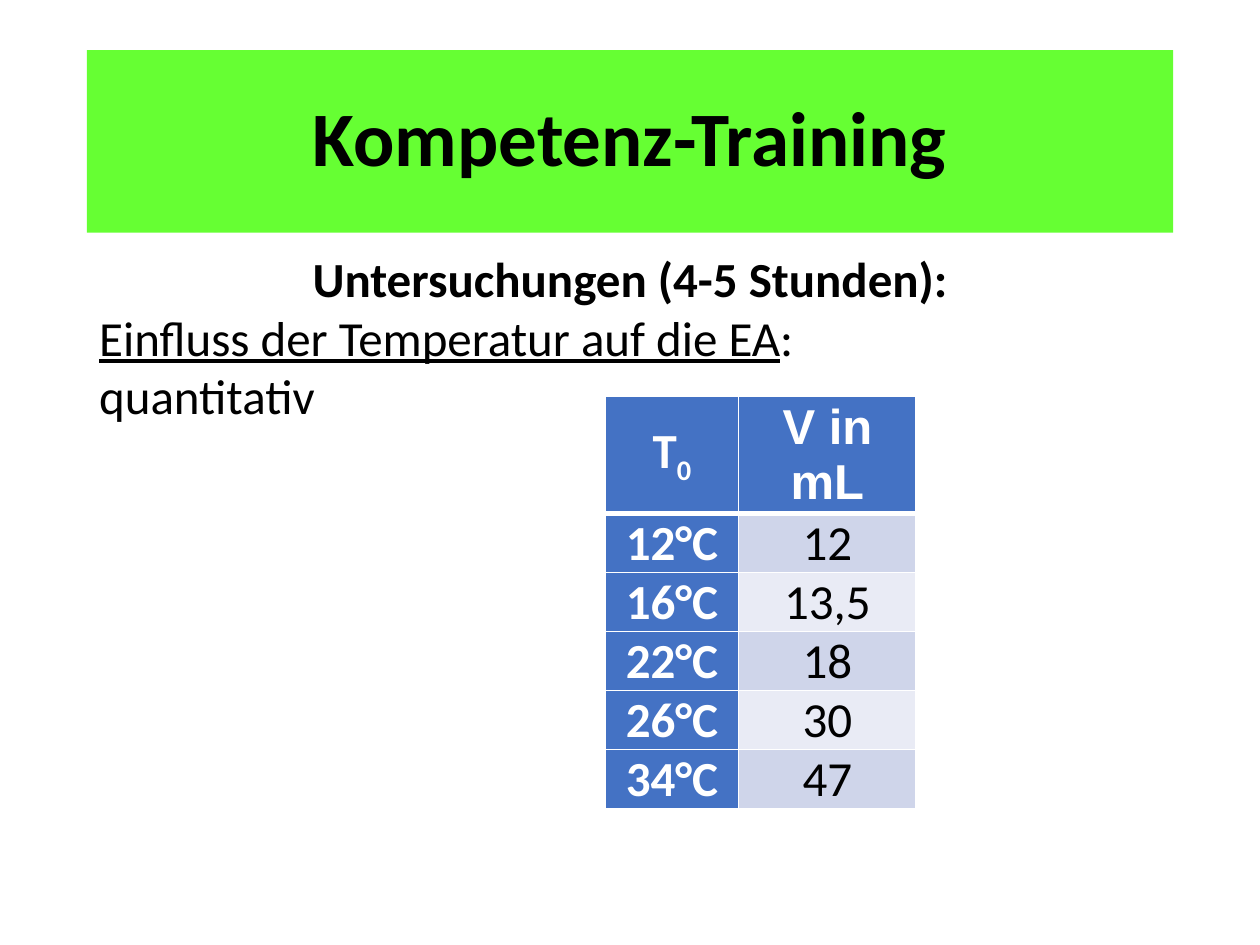
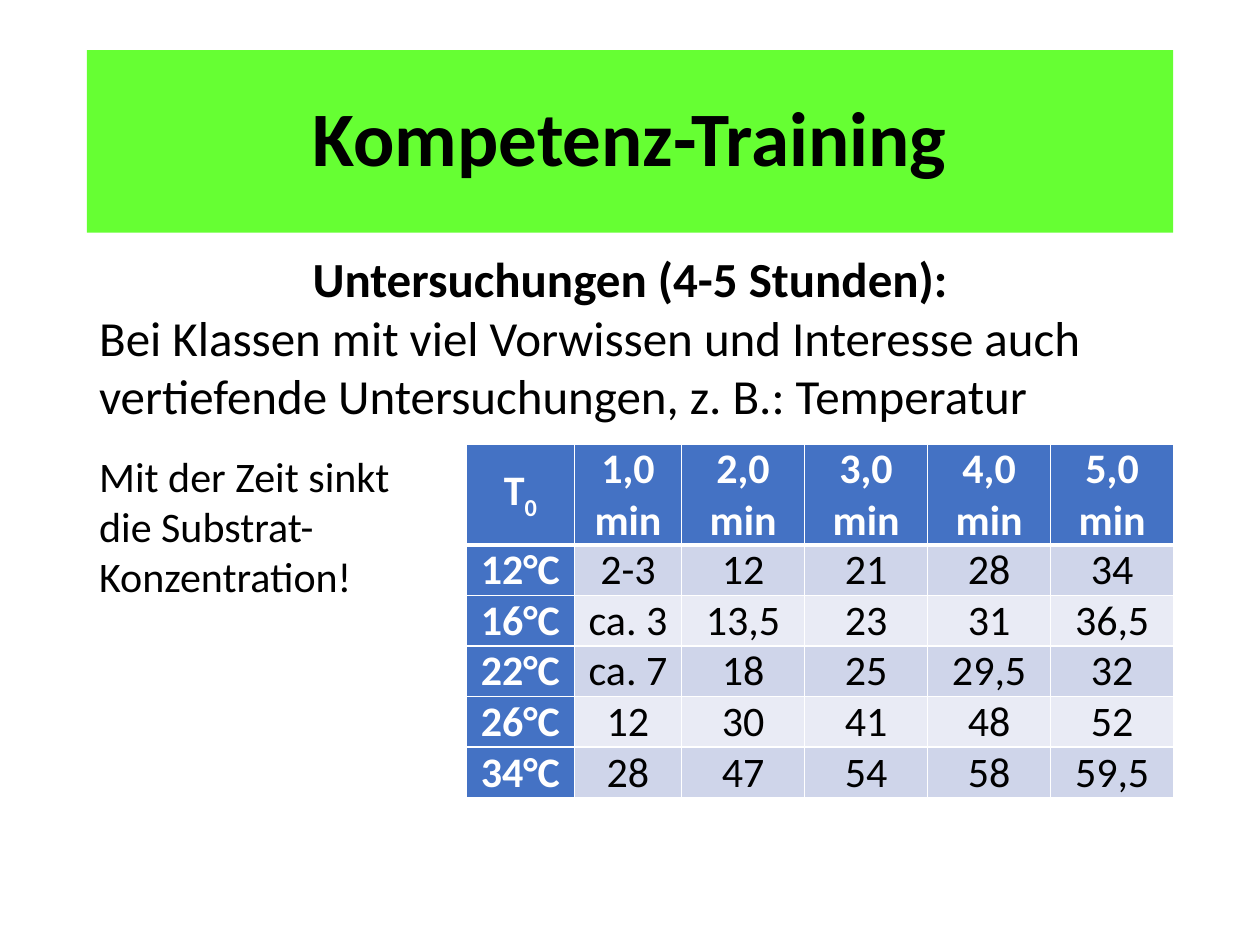
from lxml import etree
from pptx import Presentation
from pptx.dml.color import RGBColor
from pptx.enum import text
from pptx.oxml import ns
from pptx.util import Cm, Pt

COLORS = {
    "band": "66FF33",
    "black": "000000",
    "white": "FFFFFF",
    "head": "4472C4",
    "odd_row": "CFD5EA",
    "even_row": "E9EBF5",
}
FONT = "Calibri"
LEFT, WIDTH = Cm(1.75), Cm(21.9)
TEMPERATURES = ["12°C", "16°C", "22°C", "26°C", "34°C"]

slide_contents = [
    {
        "paragraphs": [[("Einfluss der Temperatur auf die EA", True), (":", False)],
                       [("quantitativ", False)]],
        "body_height": 7.44,
        "table_at": (12.2, 7.98),
        "columns": [2.69, 3.58],
        "row_heights": [2.36] + [1.19] * 5,
        "size": 28,
        "header": ["V in mL"],
        "header_font": "Arial",
        "values": [["12"], ["13,5"], ["18"], ["30"], ["47"]],
        "remark": None,
    },
    {
        "paragraphs": [[("Bei Klassen mit viel Vorwissen und Interesse auch vertiefende "
                         "Untersuchungen, z. B.: Temperatur", False)]],
        "body_height": 3.84,
        "table_at": (9.4, 8.95),
        "columns": [2.18, 2.16] + [2.48] * 4,
        "row_heights": [2.03] + [1.02] * 5,
        "size": 24,
        "header": [f"{minute},0 min" for minute in range(1, 6)],
        "header_font": FONT,
        "values": [
            ["2-3", "12", "21", "28", "34"],
            ["ca. 3", "13,5", "23", "31", "36,5"],
            ["ca. 7", "18", "25", "29,5", "32"],
            ["12", "30", "41", "48", "52"],
            ["28", "47", "54", "58", "59,5"],
        ],
        "remark": "Mit der Zeit sinkt die Substrat-Konzentration!",
    },
]


def format_run(run, size, color="black", bold=False, name=FONT):
    run.font.size = Pt(size)
    run.font.name = name
    run.font.bold = bold
    run.font.color.rgb = RGBColor.from_string(COLORS[color])


def add_border(cell, side, points):
    properties = cell._tc.get_or_add_tcPr()
    line = etree.SubElement(properties, ns.qn(f"a:ln{side}"), w=str(Pt(points)))
    fill = etree.SubElement(line, ns.qn("a:solidFill"))
    etree.SubElement(fill, ns.qn("a:srgbClr"), val=COLORS["white"])


presentation = Presentation()
presentation.slide_width, presentation.slide_height = Cm(25.4), Cm(19.05)

for content in slide_contents:
    slide = presentation.slides.add_slide(presentation.slide_layouts[5])

    title = slide.shapes.title
    title.left, title.top, title.width, title.height = LEFT, Cm(1.01), WIDTH, Cm(3.68)
    title.fill.solid()
    title.fill.fore_color.rgb = RGBColor.from_string(COLORS["band"])
    title.text_frame.text = "Kompetenz-Training"
    title.text_frame.vertical_anchor = text.MSO_ANCHOR.MIDDLE
    paragraph = title.text_frame.paragraphs[0]
    paragraph.alignment = text.PP_ALIGN.CENTER
    paragraph.line_spacing = 0.9
    format_run(paragraph.runs[0], 44, bold=True)

    body = slide.shapes.add_textbox(LEFT, Cm(4.88), WIDTH, Cm(content["body_height"]))
    body.text_frame.word_wrap = True
    body.text_frame.text = "Untersuchungen (4-5 Stunden):"
    heading = body.text_frame.paragraphs[0]
    heading.alignment = text.PP_ALIGN.CENTER
    format_run(heading.runs[0], 28, bold=True)
    for parts in content["paragraphs"]:
        paragraph = body.text_frame.add_paragraph()
        for wording, underlined in parts:
            run = paragraph.add_run()
            run.text = wording
            format_run(run, 28)
            run.font.underline = underlined

    rows = [["T"] + content["header"]]
    rows += [[temperature] + values
             for temperature, values in zip(TEMPERATURES, content["values"])]
    table_left, table_top = content["table_at"]
    table = slide.shapes.add_table(
        len(rows), len(rows[0]), Cm(table_left), Cm(table_top),
        Cm(sum(content["columns"])), Cm(sum(content["row_heights"]))).table
    table.first_col = True
    for column, width in zip(table.columns, content["columns"]):
        column.width = Cm(width)
    for row, height in zip(table.rows, content["row_heights"]):
        row.height = Cm(height)

    for row_index, row in enumerate(rows):
        for column_index, wording in enumerate(row):
            cell = table.cell(row_index, column_index)
            cell.margin_left = cell.margin_right = Cm(0.18)
            cell.margin_top = cell.margin_bottom = 0
            cell.vertical_anchor = text.MSO_ANCHOR.MIDDLE
            add_border(cell, "L", 1)
            add_border(cell, "R", 1)
            add_border(cell, "T", 3 if row_index == 1 else 1)
            add_border(cell, "B", 3 if row_index == 0 else 1)

            is_head = row_index == 0 or column_index == 0
            stripe = "odd_row" if row_index % 2 else "even_row"
            cell.fill.solid()
            cell.fill.fore_color.rgb = RGBColor.from_string(COLORS["head" if is_head else stripe])

            cell.text_frame.text = wording
            paragraph = cell.text_frame.paragraphs[0]
            paragraph.alignment = text.PP_ALIGN.CENTER
            if row_index == column_index == 0:
                subscript = paragraph.add_run()
                subscript.text = "0"
                subscript._r.get_or_add_rPr().set("baseline", "-25000")
            name = content["header_font"] if row_index == 0 and column_index else FONT
            for run in paragraph.runs:
                format_run(run, content["size"], "white" if is_head else "black", is_head, name)

    if content["remark"]:
        remark = slide.shapes.add_textbox(LEFT, Cm(8.95), Cm(6.78), Cm(3.33))
        remark.text_frame.word_wrap = True
        remark.text_frame.text = content["remark"]
        format_run(remark.text_frame.paragraphs[0].runs[0], 24)

presentation.save("out.pptx")
